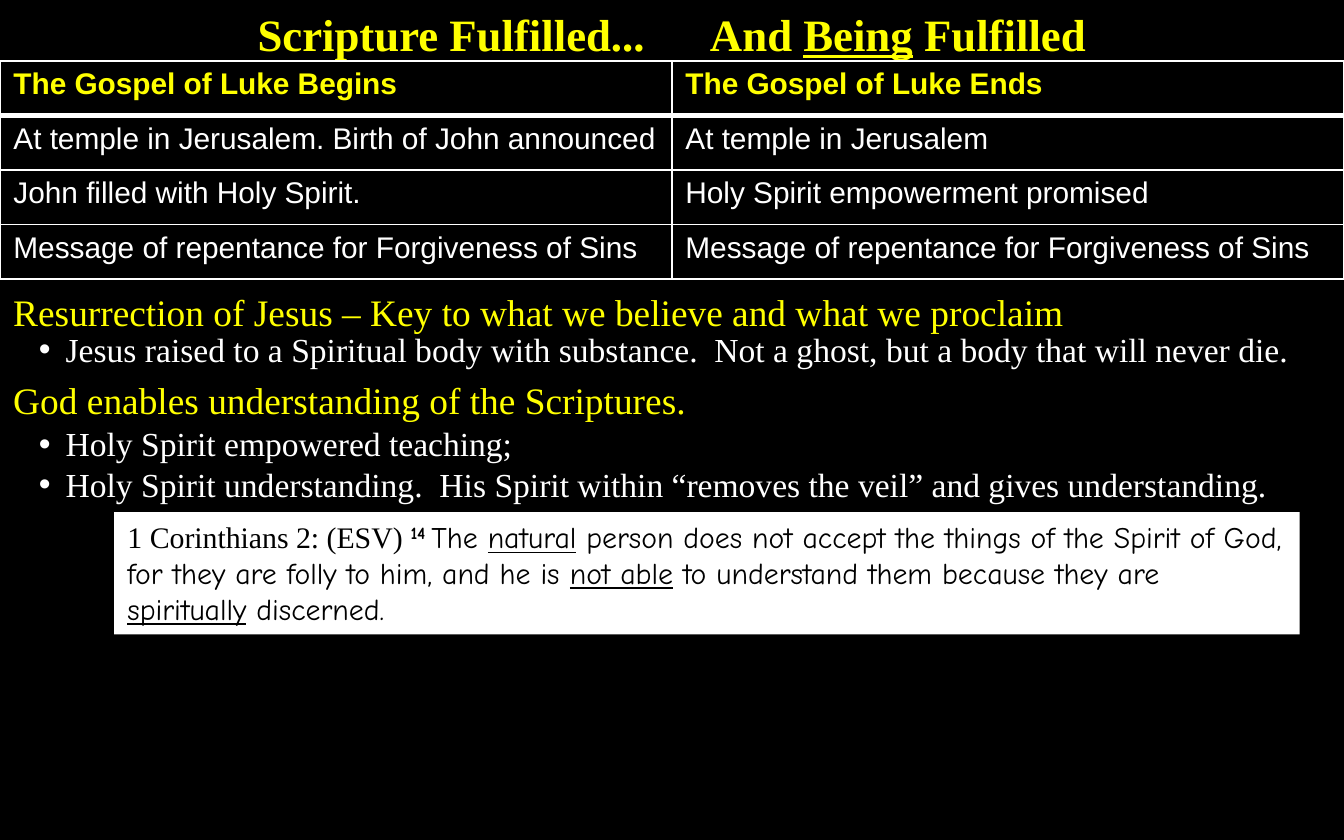
from dataclasses import dataclass

from lxml import etree
from pptx import Presentation
from pptx.dml.color import RGBColor
from pptx.enum import shapes, text
from pptx.oxml import ns
from pptx.util import Pt


@dataclass(frozen=True)
class Theme:
    """Colours, fonts and type sizes of the slide."""
    black: RGBColor = RGBColor(0, 0, 0)
    white: RGBColor = RGBColor(255, 255, 255)
    yellow: RGBColor = RGBColor(255, 255, 0)
    serif: str = "Times New Roman"
    sans: str = "Arial"
    hand: str = "Comic Neue"
    title: int = 24
    heading: int = 20
    bullet: int = 18
    small: int = 16


T = Theme()


def add_run(p, words, font, size, color, bold=False, underline=False, raised=False):
    """Append one formatted run to a paragraph."""
    r = p.add_run()
    r.text = words
    f = r.font
    f.name, f.size, f.bold, f.underline = font, Pt(size), bold, underline
    f.color.rgb = color
    if raised:
        r._r.get_or_add_rPr().set("baseline", "30000")


def add_text_box(s, box):
    """Add a wrapping text box and return its text frame."""
    tf = s.shapes.add_textbox(*map(Pt, box)).text_frame
    tf.word_wrap = True
    tf.auto_size = text.MSO_AUTO_SIZE.SHAPE_TO_FIT_TEXT
    return tf


def add_title(s, box, indent, gap_stop):
    """Place the two-part title, the second part at a tab stop."""
    tf = add_text_box(s, box)
    tf.margin_left = Pt(indent)
    p = tf.paragraphs[0]
    tabs = etree.SubElement(p._p.get_or_add_pPr(), ns.qn("a:tabLst"))
    etree.SubElement(tabs, ns.qn("a:tab"), pos=str(Pt(gap_stop)), algn="l")
    for words, underline in (("Scripture Fulfilled...\tAnd ", False), ("Being", True),
                             (" Fulfilled", False)):
        add_run(p, words, T.serif, T.title, T.yellow, True, underline)


def add_heading(s, box, words):
    """Place a yellow heading line."""
    add_run(add_text_box(s, box).paragraphs[0], words, T.serif, T.heading, T.yellow)


def add_bullets(s, box, lines, hang=14.4):
    """Place a list of hanging bullets."""
    tf = add_text_box(s, box)
    for i, line in enumerate(lines):
        p = tf.add_paragraph() if i else tf.paragraphs[0]
        pPr = p._p.get_or_add_pPr()
        pPr.set("marL", str(Pt(hang)))
        pPr.set("indent", str(-Pt(hang)))
        etree.SubElement(pPr, ns.qn("a:buFont"), typeface=T.sans)
        etree.SubElement(pPr, ns.qn("a:buChar"), char="•")
        add_run(p, line, T.serif, T.bullet, T.white)


def set_borders(cell, **widths):
    """Draw white cell borders of the given point widths."""
    tcPr = cell._tc.get_or_add_tcPr()
    for side, width in widths.items():
        ln = etree.SubElement(tcPr, ns.qn(f"a:ln{side}"), w=str(Pt(width)))
        fill = etree.SubElement(ln, ns.qn("a:solidFill"))
        etree.SubElement(fill, ns.qn("a:srgbClr"), val=str(T.white))


def add_comparison(s, box, rows):
    """Place the table comparing how the Gospel begins and ends."""
    table = s.shapes.add_table(len(rows), len(rows[0]), *map(Pt, box)).table
    for i, row in enumerate(rows):
        table.rows[i].height = Pt(box[3] / len(rows))
        for j, words in enumerate(row):
            cell = table.cell(i, j)
            set_borders(cell, L=1, R=1, T=3 if i == 1 else 1, B=3 if i == 0 else 1)
            cell.fill.solid()
            cell.fill.fore_color.rgb = T.black
            add_run(cell.text_frame.paragraphs[0], words, T.sans, T.small,
                    T.white if i else T.yellow, bold=i == 0)


def add_verse(s, box):
    """Place the quoted verse on a white panel."""
    sp = s.shapes.add_shape(shapes.MSO_SHAPE.RECTANGLE, *map(Pt, box))
    sp.shadow.inherit = False
    sp.fill.solid()
    sp.fill.fore_color.rgb = T.white
    sp.line.fill.background()
    tf = sp.text_frame
    tf.word_wrap = True
    tf.auto_size = text.MSO_AUTO_SIZE.SHAPE_TO_FIT_TEXT
    tf.vertical_anchor = text.MSO_ANCHOR.TOP
    p = tf.paragraphs[0]
    p.alignment = text.PP_ALIGN.LEFT
    add_run(p, "1 Corinthians 2: (ESV) ", T.serif, T.small, T.black)
    add_run(p, "14 ", T.hand, T.small, T.black, bold=True, raised=True)
    phrases = (
        "The ", "natural",
        " person does not accept the things of the Spirit of God, "
        "for they are folly to him, and he is ", "not able",
        " to understand them because they are ", "spiritually", " discerned.",
    )
    for i, words in enumerate(phrases):
        add_run(p, words, T.hand, T.small, T.black, underline=i % 2 == 1)


def main():
    """Build and save the slide."""
    prs = Presentation()
    prs.slide_width, prs.slide_height = Pt(720), Pt(450)
    s = prs.slides.add_slide(prs.slide_layouts[6])
    s.background.fill.solid()
    s.background.fill.fore_color.rgb = T.black

    add_title(s, (0, 0, 720, 36), indent=138, gap_stop=242.4)
    add_heading(s, (0, 151.2, 635, 31.5),
                "Resurrection of Jesus – Key to what we believe and what we proclaim")
    add_bullets(s, (13.7, 172.8, 706.3, 29), [
        "Jesus raised to a Spiritual body with substance.  "
        "Not a ghost, but a body that will never die."])
    add_verse(s, (61.2, 274.3, 635, 65.5))
    add_comparison(s, (0, 32.8, 720, 116.64), [
        ("The Gospel of Luke Begins", "The Gospel of Luke Ends"),
        ("At temple in Jerusalem. Birth of John announced", "At temple in Jerusalem"),
        ("John filled with Holy Spirit.", "Holy Spirit empowerment promised"),
        ("Message of repentance for Forgiveness of Sins",) * 2])
    add_heading(s, (0, 198.7, 635, 31.5), "God enables understanding of the Scriptures.")
    add_bullets(s, (13.7, 223.2, 706.3, 51), [
        "Holy Spirit empowered teaching;",
        "Holy Spirit understanding.  His Spirit within “removes the veil” "
        "and gives understanding."])
    prs.save("out.pptx")


if __name__ == "__main__":
    main()
